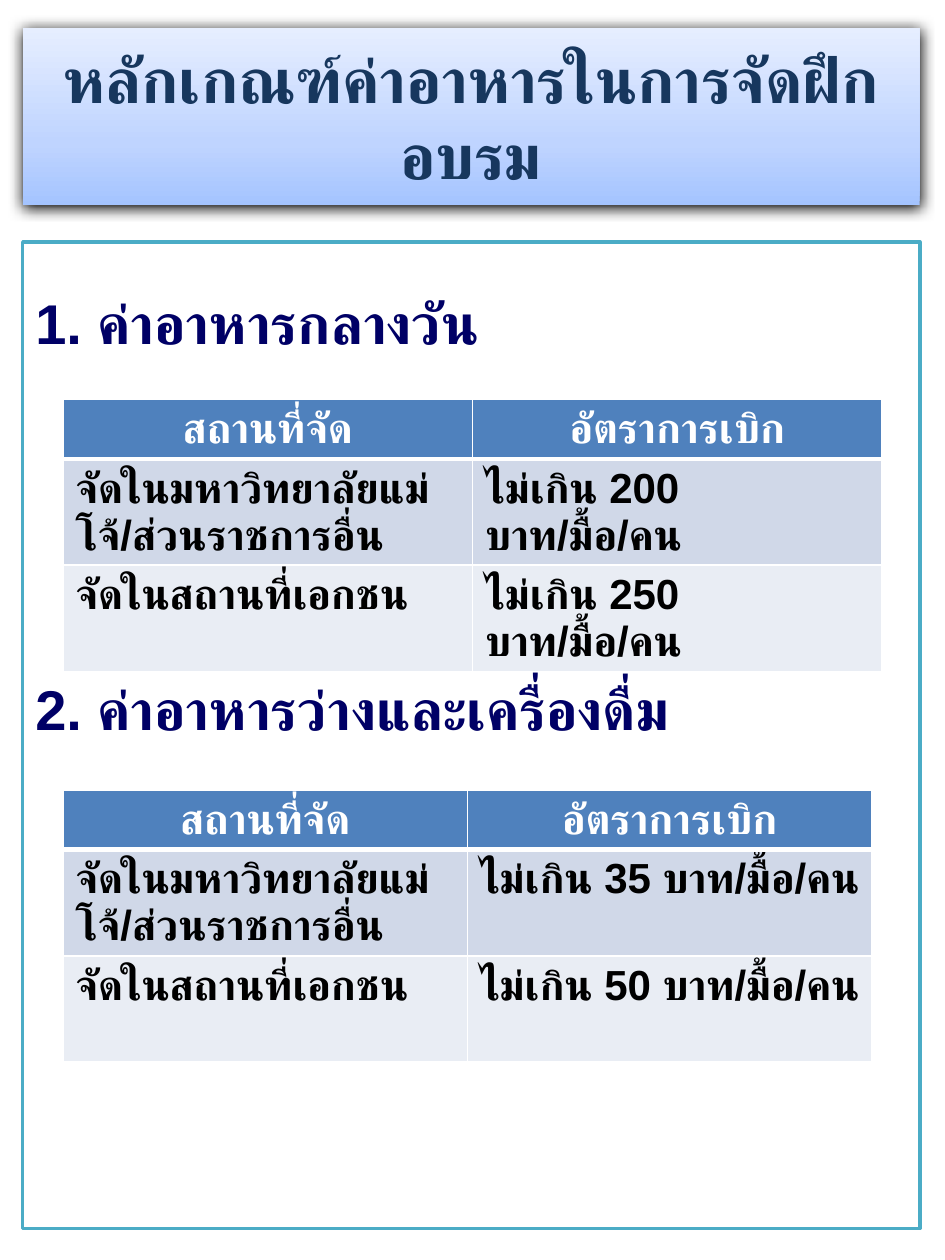
from dataclasses import dataclass

import pptx
import pptx.dml.color
import pptx.enum.text
import pptx.oxml
import pptx.oxml.ns
import pptx.util

WIDTH, HEIGHT = 7.5, 10
MARGIN = 0.024 * WIDTH
PANEL_WIDTH = WIDTH - 2 * MARGIN - 0.02
TABLE_LEFT = WIDTH / 15
ROW_HEIGHTS = (0.43, 0.84, 0.84)
HEADING_INDENT = 0.59

ALIGN = pptx.enum.text.PP_ALIGN
ANCHOR = pptx.enum.text.MSO_ANCHOR


@dataclass(frozen=True)
class Theme:
    font: str = "Arial"
    title_size: int = 36
    heading_size: int = 32
    table_size: int = 24
    title: str = "17375E"
    title_outline: str = "3333CC"
    title_gradient: tuple = ((0, "A4C4FF"), (35, "BFD4FF"), (100, "E6EEFF"))
    heading: str = "000066"
    panel_line: str = "4BACC6"
    white: str = "FFFFFF"
    black: str = "000000"
    row_fills: tuple = ("4F81BD", "D0D8E8", "E9EDF4")


THEME = Theme()
HEADER = ("สถานที่จัด", "อัตราการเบิก")
PLACES = ("จัดในมหาวิทยาลัยแม่โจ้/ส่วนราชการอื่น", "จัดในสถานที่เอกชน")


def rgb(color):
    return pptx.dml.color.RGBColor.from_string(color)


def xml(markup):
    """Parse markup whose elements use the a: prefix."""
    head, mark, tail = markup.partition(">")
    names = " " + pptx.oxml.ns.nsdecls("a")
    if head.endswith("/"):
        head, names = head[:-1], names + "/"
    return pptx.oxml.parse_xml(head + names + mark + tail)


def solid(color):
    return f'<a:solidFill><a:srgbClr val="{color}"/></a:solidFill>'


def write(para, text, size, color, align=None, before=None, after=None):
    para.alignment = align
    if before is not None:
        para.space_before = pptx.util.Pt(before)
    if after is not None:
        para.space_after = pptx.util.Pt(after)
    span = para.add_run()
    span.text = text
    span.font.name = THEME.font
    span.font.size = pptx.util.Pt(size)
    span.font.bold = True
    span.font.color.rgb = rgb(color)
    span.font._element.append(xml(f'<a:cs typeface="{THEME.font}"/>'))
    return span


def place(box, left, top, width, height):
    box.left, box.top, box.width, box.height = map(
        pptx.util.Inches, (left, top, width, height))
    box.text_frame.word_wrap = True
    box.text_frame.auto_size = pptx.enum.text.MSO_AUTO_SIZE.NONE


def add_title(page, text):
    box = page.shapes.title
    place(box, MARGIN, 0.022 * HEIGHT, PANEL_WIDTH, 0.141 * HEIGHT)
    box.text_frame.vertical_anchor = ANCHOR.MIDDLE
    stops = "".join(
        f'<a:gs pos="{share * 1000}"><a:srgbClr val="{color}"/></a:gs>'
        for share, color in THEME.title_gradient)
    properties = box._element.spPr
    properties.append(xml('<a:prstGeom prst="rect"><a:avLst/></a:prstGeom>'))
    properties.append(xml(
        f'<a:gradFill><a:gsLst>{stops}</a:gsLst>'
        '<a:lin ang="16200000" scaled="0"/></a:gradFill>'))
    properties.append(xml(
        '<a:effectLst><a:outerShdw blurRad="107950" dist="12700" dir="5400000"'
        ' rotWithShape="0"><a:srgbClr val="000000"/></a:outerShdw></a:effectLst>'))
    span = write(box.text_frame.paragraphs[0], text, THEME.title_size,
                 THEME.title, align=ALIGN.CENTER, before=0)
    span.font._element.insert(
        0, xml(f'<a:ln w="9525">{solid(THEME.title_outline)}</a:ln>'))


def add_headings(page, headings, gap):
    """Fill the framed body with headings, leaving room for a table between."""
    box = page.placeholders[1]
    place(box, MARGIN, 0.192 * HEIGHT, PANEL_WIDTH, 0.783 * HEIGHT)
    box.fill.solid()
    box.fill.fore_color.rgb = rgb(THEME.white)
    box.line.color.rgb = rgb(THEME.panel_line)
    box.line.width = pptx.util.Pt(2)
    frame = box.text_frame
    frame.margin_top = pptx.util.Inches(0.37)
    for index, heading in enumerate(headings):
        para = frame.add_paragraph() if index else frame.paragraphs[0]
        properties = para._p.get_or_add_pPr()
        indent = pptx.util.Inches(HEADING_INDENT)
        properties.set("marL", str(indent))
        properties.set("indent", str(-indent))
        properties.append(xml("<a:buNone/>"))
        write(para, heading, THEME.heading_size, THEME.heading,
              before=gap if index else 0, after=6)


def set_borders(cell, top, bottom):
    properties = cell._tc.get_or_add_tcPr()
    widths = (("L", 1), ("R", 1), ("T", top), ("B", bottom))
    for index, (side, width) in enumerate(widths):
        properties.insert(index, xml(
            f'<a:ln{side} w="{pptx.util.Pt(width)}">{solid(THEME.white)}</a:ln{side}>'))


def add_rate_table(page, top, width, rates, header_anchor):
    rows = [HEADER, *zip(PLACES, (f"ไม่เกิน {rate} บาท/มื้อ/คน" for rate in rates))]
    table = page.shapes.add_table(
        len(rows), len(HEADER), pptx.util.Inches(TABLE_LEFT), pptx.util.Inches(top),
        pptx.util.Inches(width), pptx.util.Inches(sum(ROW_HEIGHTS))).table
    for row_index, texts in enumerate(rows):
        table.rows[row_index].height = pptx.util.Inches(ROW_HEIGHTS[row_index])
        is_header = row_index == 0
        for column_index, text in enumerate(texts):
            cell = table.cell(row_index, column_index)
            cell.fill.solid()
            cell.fill.fore_color.rgb = rgb(THEME.row_fills[row_index])
            cell.vertical_anchor = header_anchor if is_header else ANCHOR.TOP
            set_borders(cell, top=3 if row_index == 1 else 1,
                        bottom=3 if is_header else 1)
            write(cell.text_frame.paragraphs[0], text, THEME.table_size,
                  THEME.white if is_header else THEME.black,
                  align=ALIGN.CENTER if is_header else None)


def main():
    deck = pptx.Presentation()
    deck.slide_width = pptx.util.Inches(WIDTH)
    deck.slide_height = pptx.util.Inches(HEIGHT)
    page = deck.slides.add_slide(deck.slide_layouts[1])
    add_title(page, "หลักเกณฑ์ค่าอาหารในการจัดฝึกอบรม")
    add_headings(page, ("1. ค่าอาหารกลางวัน", "2. ค่าอาหารว่างและเครื่องดื่ม"), gap=176)
    add_rate_table(page, 0.317 * HEIGHT, 6.5, (200, 250), ANCHOR.MIDDLE)
    add_rate_table(page, 0.627 * HEIGHT, 6.42, (35, 50), ANCHOR.TOP)
    deck.save("out.pptx")


if __name__ == "__main__":
    main()
